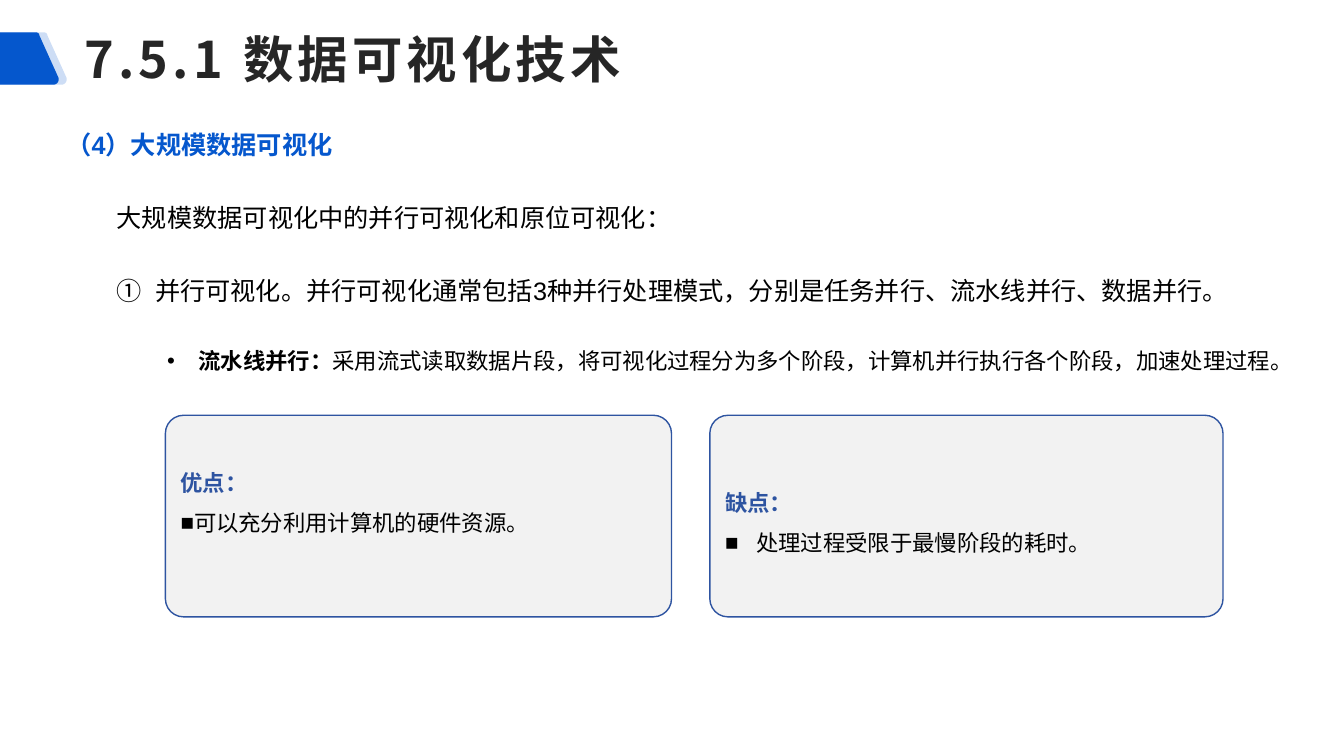
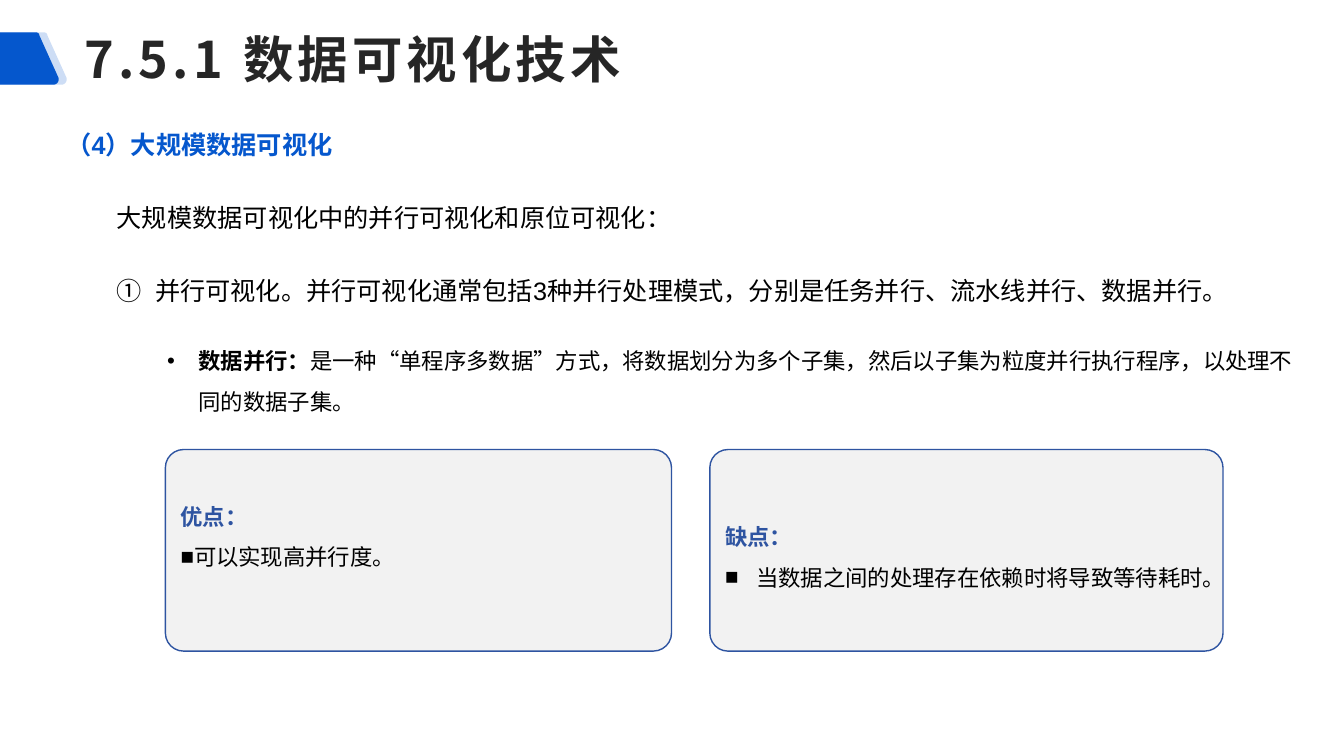
from lxml import etree
from pptx import Presentation
from pptx.dml.color import RGBColor
from pptx.enum.shapes import MSO_SHAPE as SHAPE
from pptx.enum.text import MSO_ANCHOR as ANCHOR, PP_ALIGN as ALIGN
from pptx.oxml.ns import qn
from pptx.util import Pt

PX = 9144  # 100 px to the inch
BLUE = RGBColor(0x05, 0x57, 0xCD)
NAVY = RGBColor(0x2E, 0x54, 0xA1)
INK = RGBColor(0x26, 0x26, 0x26)
BLACK = RGBColor(0, 0, 0)
PANEL = RGBColor(0xF2, 0xF2, 0xF2)
LATIN, CJK = "Arial", "Noto Sans CJK SC"

# Run formats
TITLE = dict(size=Pt(36), name=CJK, bold=True, color=INK)
HEADING = dict(size=Pt(18), name=LATIN, bold=True, color=BLUE)
BODY = dict(size=Pt(18), name=LATIN, bold=False, color=BLACK)
DETAIL = dict(BODY, size=Pt(16))
TERM = dict(DETAIL, bold=True)
LABEL = dict(TERM, color=NAVY)

# Paragraph formats: left margin and first-line indent in px, then the bullet
PLAIN = (0, 0, None)
INTRO = (0, 50, None)
NUMBERED = (88, -38, ("buAutoNum", "type", "circleNumDbPlain"))
DOT = (131, -31, ("buChar", "char", "•"))
SQUARE_TIGHT = (0, 0, ("buChar", "char", "■"))
SQUARE = (31, -31, ("buChar", "char", "■"))

SLIDES = [
    dict(term="流水线并行：",
         detail="采用流式读取数据片段，将可视化过程分为多个阶段，计算机并行执行各个阶段，加速处理过程。",
         pro="可以充分利用计算机的硬件资源。",
         con="处理过程受限于最慢阶段的耗时。",
         body_height=271, panel_top=412),
    dict(term="数据并行：",
         detail="是一种“单程序多数据”方式，将数据划分为多个子集，然后以子集为粒度并行执行程序，以处理不同的数据子集。",
         pro="可以实现高并行度。",
         con="当数据之间的处理存在依赖时将导致等待耗时。",
         body_height=311, panel_top=446),
]


def write(tf, paragraphs, line_spacing=1.5, after=0):
    """Fill a text frame with (paragraph format, [(text, run format), ...])."""
    tf.word_wrap = True
    for i, ((margin, indent, bullet), runs) in enumerate(paragraphs):
        p = tf.paragraphs[0] if i == 0 else tf.add_paragraph()
        pPr = p._p.get_or_add_pPr()
        pPr.set("marL", str(margin * PX))
        pPr.set("indent", str(indent * PX))
        if bullet:
            tag, key, value = bullet
            etree.SubElement(pPr, qn("a:buFont")).set("typeface", LATIN)
            etree.SubElement(pPr, qn("a:" + tag)).set(key, value)
        p.alignment = ALIGN.LEFT
        p.line_spacing = line_spacing
        p.space_after = Pt(after)
        for text, fmt in runs:
            r = p.add_run()
            r.text = text
            for key, value in fmt.items():
                if key == "color":
                    r.font.color.rgb = value
                else:
                    setattr(r.font, key, value)
            etree.SubElement(r._r.get_or_add_rPr(), qn("a:ea")).set("typeface", CJK)


def bezier(a, b, c, d, steps=8):
    """Points along a cubic curve, without its start."""
    ts = [i / steps for i in range(1, steps + 1)]
    return [tuple((1 - t) ** 3 * a[k] + 3 * (1 - t) ** 2 * t * b[k]
                  + 3 * (1 - t) * t ** 2 * c[k] + t ** 3 * d[k] for k in (0, 1))
            for t in ts]


prs = Presentation()
prs.slide_width, prs.slide_height = 1333 * PX, 750 * PX

# Right edge of the title band, with rounded corners
band_edge = [(35, 32), *bezier((35, 32), (37, 32), (39, 33), (39, 35)),
             (58, 77), *bezier((58, 77), (59, 80), (57, 84), (53, 84))]

for content in SLIDES:
    s = prs.slides.add_slide(prs.slide_layouts[6])

    # Title band: pale layer behind, solid layer in front
    for shift, alpha in ((8, 20), (0, 100)):
        builder = s.shapes.build_freeform(0, 32 * PX, scale=1.0)
        points = [(round((x + shift) * PX), round(y * PX)) for x, y in band_edge]
        builder.add_line_segments(points + [(0, 84 * PX)], close=True)
        sp = builder.convert_to_shape()
        sp.shadow.inherit = False
        sp.line.fill.background()
        sp.fill.solid()
        sp.fill.fore_color.rgb = BLUE
        if alpha < 100:
            color = sp._element.spPr.find(qn("a:solidFill"))[0]
            etree.SubElement(color, qn("a:alpha")).set("val", str(alpha * 1000))

    # Title
    tf = s.shapes.add_textbox(74 * PX, 8 * PX, 1259 * PX, 100 * PX).text_frame
    tf.vertical_anchor = ANCHOR.MIDDLE
    write(tf, [(PLAIN, [("7.5.1 数据可视化技术", TITLE)])], line_spacing=1.0)
    tf.paragraphs[0].runs[0]._r.get_or_add_rPr().set("spc", "300")

    # Body text
    tf = s.shapes.add_textbox(56 * PX, 108 * PX, 1238 * PX,
                              content["body_height"] * PX).text_frame
    write(tf, [
        (PLAIN, [("（4）大规模数据可视化", HEADING)]),
        (INTRO, [("大规模数据可视化中的并行可视化和原位可视化：", BODY)]),
        (NUMBERED, [("并行可视化。并行可视化通常包括3种并行处理模式，"
                     "分别是任务并行、流水线并行、数据并行。", BODY)]),
        (DOT, [(content["term"], TERM), (content["detail"], DETAIL)]),
    ], after=20)

    # Panels for strengths and weaknesses
    for left, width, corner, bottom, label, bullet, text in (
            (164, 502, 0.09, 45, "优点：", SQUARE_TIGHT, content["pro"]),
            (704, 509, 0.09, 5, "缺点：", SQUARE, content["con"])):
        sp = s.shapes.add_shape(SHAPE.ROUNDED_RECTANGLE, left * PX,
                                content["panel_top"] * PX, width * PX, 200 * PX)
        sp.adjustments[0] = corner
        sp.shadow.inherit = False
        sp.fill.solid()
        sp.fill.fore_color.rgb = PANEL
        sp.line.color.rgb = NAVY
        sp.line.width = Pt(1)
        tf = sp.text_frame
        tf.vertical_anchor = ANCHOR.MIDDLE
        tf.margin_bottom = bottom * PX
        write(tf, [(PLAIN, [(label, LABEL)]), (bullet, [(text, DETAIL)])])

prs.save("out.pptx")
